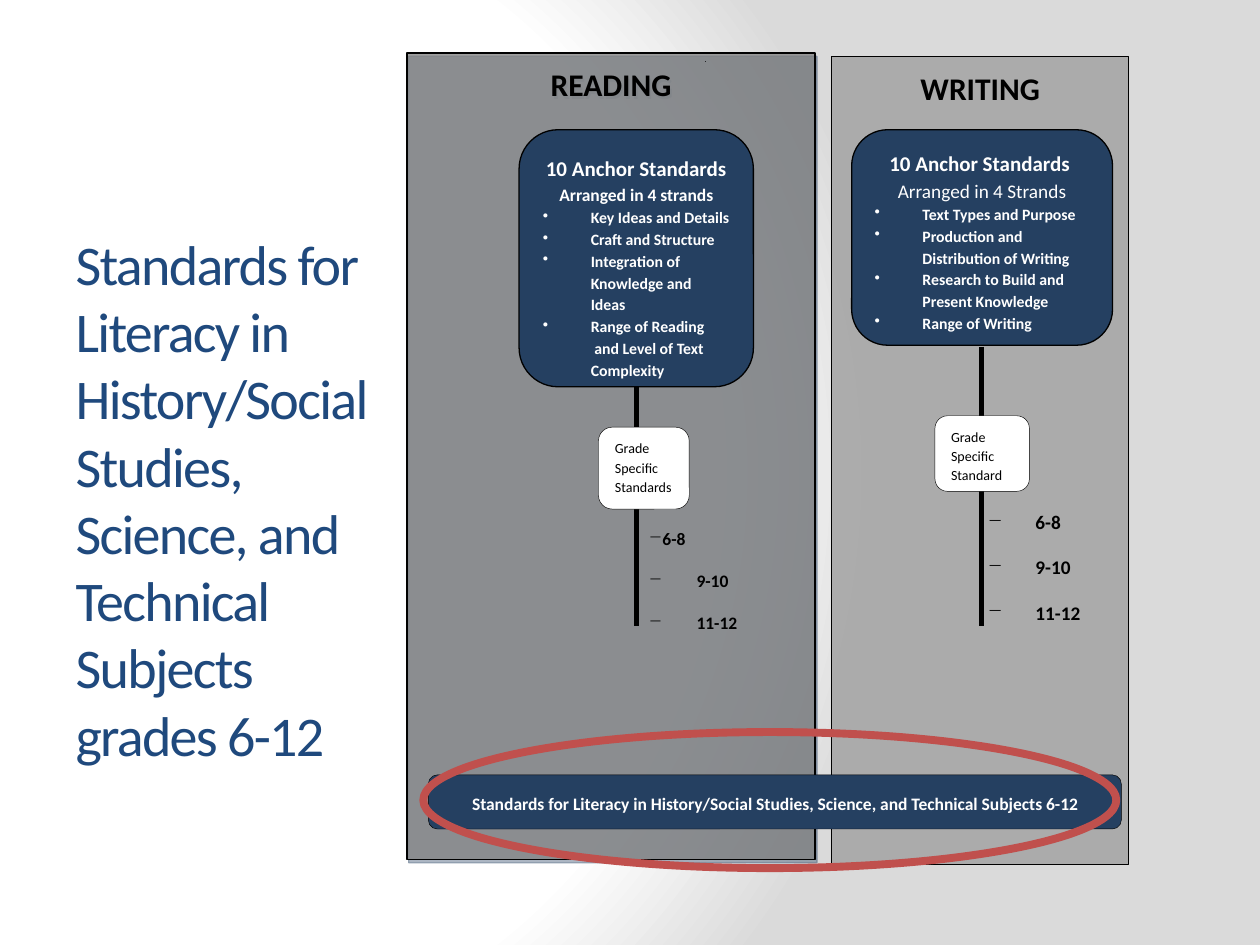
from lxml.etree import SubElement
from pptx import Presentation
from pptx.dml.color import RGBColor
from pptx.enum.shapes import MSO_CONNECTOR, MSO_SHAPE
from pptx.enum.text import MSO_ANCHOR, PP_ALIGN
from pptx.oxml import parse_xml
from pptx.oxml.ns import nsdecls, qn
from pptx.util import Inches, Pt

BLACK = RGBColor(0x00, 0x00, 0x00)
WHITE = RGBColor(0xFF, 0xFF, 0xFF)
NAVY = RGBColor(0x25, 0x40, 0x61)
BLUE = RGBColor(0x1F, 0x49, 0x7D)
DOT = RGBColor(0x4F, 0x81, 0xBD)
RED = RGBColor(0xC0, 0x50, 0x4D)
GRAY = RGBColor(0x80, 0x80, 0x80)
SILVER = RGBColor(0xA6, 0xA6, 0xA6)
LEFT, CENTER = PP_ALIGN.LEFT, PP_ALIGN.CENTER
INDENT = 0.38


class Deck:
    font = "Calibri"

    def __init__(self):
        self.prs = Presentation()
        self.prs.slide_width, self.prs.slide_height = Inches(10), Inches(7.5)
        self.slide = self.prs.slides.add_slide(self.prs.slide_layouts[5])
        self.shapes = self.slide.shapes

    def backdrop(self, stops):
        """Fill the background with a gradient spreading from the left."""
        marks = "".join(f'<a:gs pos="{pos * 1000}"><a:srgbClr val="{color}"/></a:gs>'
                        for pos, color in stops)
        grad = parse_xml(
            f'<a:gradFill {nsdecls("a")} rotWithShape="1"><a:gsLst>{marks}</a:gsLst>'
            '<a:path path="circle"><a:fillToRect l="20000" t="50000" r="100000" b="50000"/>'
            '</a:path></a:gradFill>')
        fill = self.slide.background.fill
        fill.solid()
        old = self.slide.element.find(".//" + qn("a:solidFill"))
        old.getparent().replace(old, grad)

    def style(self, run, size, color, bold):
        font = run.font
        font.name, font.size, font.bold = self.font, Pt(size), bold
        font.color.rgb = color

    def title(self, text, box, size, color):
        shape = self.shapes.title
        shape.left, shape.top, shape.width, shape.height = map(Inches, box)
        frame = shape.text_frame
        frame.text = text
        frame.word_wrap = True
        frame.vertical_anchor = MSO_ANCHOR.MIDDLE
        para = frame.paragraphs[0]
        para.alignment = LEFT
        for run in para.runs:
            self.style(run, size, color, False)
            run.font._element.set("spc", "-100")

    def para(self, shape, text, size, color=BLACK, bold=True, align=LEFT,
             spread=1.15, before=0, after=0, mark=None, margin=INDENT):
        """Append a paragraph; text is a string or a list of (text, size)."""
        frame = shape.text_frame
        para = frame.paragraphs[0]
        if para.runs:
            para = frame.add_paragraph()
        if isinstance(text, str):
            para.text = text
            for run in para.runs:
                self.style(run, size, color, bold)
        else:
            for part, points in text:
                run = para.add_run()
                run.text = part
                self.style(run, points, color, bold)
        para.alignment, para.line_spacing = align, spread
        para.space_before, para.space_after = Pt(before), Pt(after)
        if mark:
            props = para._p.get_or_add_pPr()
            props.set("marL", str(Inches(margin)))
            props.set("indent", str(Inches(-INDENT)))
            SubElement(props, qn("a:buChar")).set("char", mark)

    def shape(self, kind, box, fill, line=0.75, edge=BLACK, alpha=None):
        shape = self.shapes.add_shape(kind, *map(Inches, box))
        shape.shadow.inherit = False
        if fill is None:
            shape.fill.background()
        else:
            shape.fill.solid()
            shape.fill.fore_color.rgb = fill
        if alpha:
            tint = shape._element.spPr.find(qn("a:solidFill"))[0]
            SubElement(tint, qn("a:alpha")).set("val", str(alpha * 1000))
        shape.line.color.rgb, shape.line.width = edge, Pt(line)
        shape.text_frame.word_wrap = True
        shape.text_frame.vertical_anchor = MSO_ANCHOR.TOP
        return shape

    def panel(self, name, box, fill, alpha):
        panel = self.shape(MSO_SHAPE.RECTANGLE, box, fill, alpha=alpha)
        self.para(panel, name, 18, align=CENTER, after=10)
        return panel

    def shade(self, shape):
        """Give the shape a hard offset shadow."""
        effects = shape._element.spPr.find(qn("a:effectLst"))
        effects.append(parse_xml(
            f'<a:outerShdw {nsdecls("a")} blurRad="0" dist="{Pt(2.2)}" dir="{63 * 60000}" '
            f'algn="ctr" rotWithShape="0"><a:srgbClr val="{NAVY}"><a:alpha val="50000"/>'
            '</a:srgbClr></a:outerShdw>'))

    def card(self, box, heads, strands):
        card = self.shape(MSO_SHAPE.ROUNDED_RECTANGLE, box, NAVY)
        for text, size, bold in heads:
            self.para(card, text, size, WHITE, bold, CENTER)
        for strand in strands:
            self.para(card, strand, 9, WHITE, mark="•")

    def stem(self, x, top, end, width):
        line = self.shapes.add_connector(
            MSO_CONNECTOR.STRAIGHT, Inches(x), Inches(top), Inches(x), Inches(end))
        line.line.color.rgb, line.line.width = BLACK, Pt(width)
        SubElement(line._element.spPr, qn("a:effectLst"))

    def note(self, text, box):
        note = self.shape(MSO_SHAPE.ROUNDED_RECTANGLE, box, WHITE, 0.25)
        self.para(note, text, 8, bold=False, after=10)

    def grades(self, box, rows, size):
        text = self.shapes.add_textbox(*map(Inches, box))
        text.text_frame.word_wrap = True
        for grade, look in rows:
            self.para(text, grade, size, mark="─", **look)

    def band(self, text, box):
        band = self.shape(MSO_SHAPE.ROUNDED_RECTANGLE, box, NAVY, 0.25)
        band.text_frame.vertical_anchor = MSO_ANCHOR.MIDDLE
        self.para(band, text, 10, WHITE, align=CENTER, after=10)


def main():
    deck = Deck()
    deck.backdrop([(0, "FFFFFF"), (75, "FFFFFF"), (100, "DADADA")])
    topic = "Standards for Literacy in History/Social Studies, Science, and Technical Subjects "
    deck.title(topic + "\vgrades 6-12", (0.5, 1.67, 2.83, 4.57), 32, BLUE)

    deck.shade(deck.panel("READING", (3.23, 0.42, 3.24, 6.4), GRAY, 75))
    deck.panel("WRITING", (6.6, 0.45, 2.36, 6.41), SILVER, 90)

    anchor = "10 Anchor Standards"
    deck.card((4.12, 1.03, 1.86, 2.04),
              [([(anchor, 12), (" ", 14), ("Arranged in 4 strands", 10)], None, True)],
              ["Key Ideas and Details", "Craft and Structure",
               "Integration of Knowledge and Ideas",
               "Range of Reading\v and Level of Text Complexity"])
    deck.card((6.76, 1.03, 2.07, 1.71),
              [(anchor + " ", 12, True), ("Arranged in 4 Strands", 11, False)],
              ["Text Types and Purpose", "Production and Distribution of Writing",
               "Research to Build and Present Knowledge", "Range of Writing"])

    first = dict(spread=1.5, after=5, margin=0)
    later = dict(before=5, after=5)
    even = dict(spread=1.5, after=6)
    spans = ["6-8", "9-10", "11-12"]
    deck.grades((5.05, 4.06, 0.94, 1.18), zip(spans, [first, later, later]), 10)
    deck.grades((7.74, 3.91, 1.03, 1.41), zip(spans, [even] * 3), 11)

    deck.stem(7.79, 2.75, 4.97, 2.75)
    deck.note("Grade Specific Standard", (7.42, 3.3, 0.75, 0.6))
    deck.stem(5.05, 3.07, 4.97, 3)
    deck.note("Grade Specific Standards", (4.75, 3.39, 0.72, 0.65))

    deck.band(topic + "6-12", (3.4, 6.15, 5.5, 0.43))
    deck.shape(MSO_SHAPE.RECTANGLE, (5.6, 0.49, 0, 0), DOT)
    deck.shape(MSO_SHAPE.OVAL, (3.36, 5.81, 5.5, 1.08), None, 4.5, RED)
    deck.prs.save("out.pptx")


if __name__ == "__main__":
    main()
